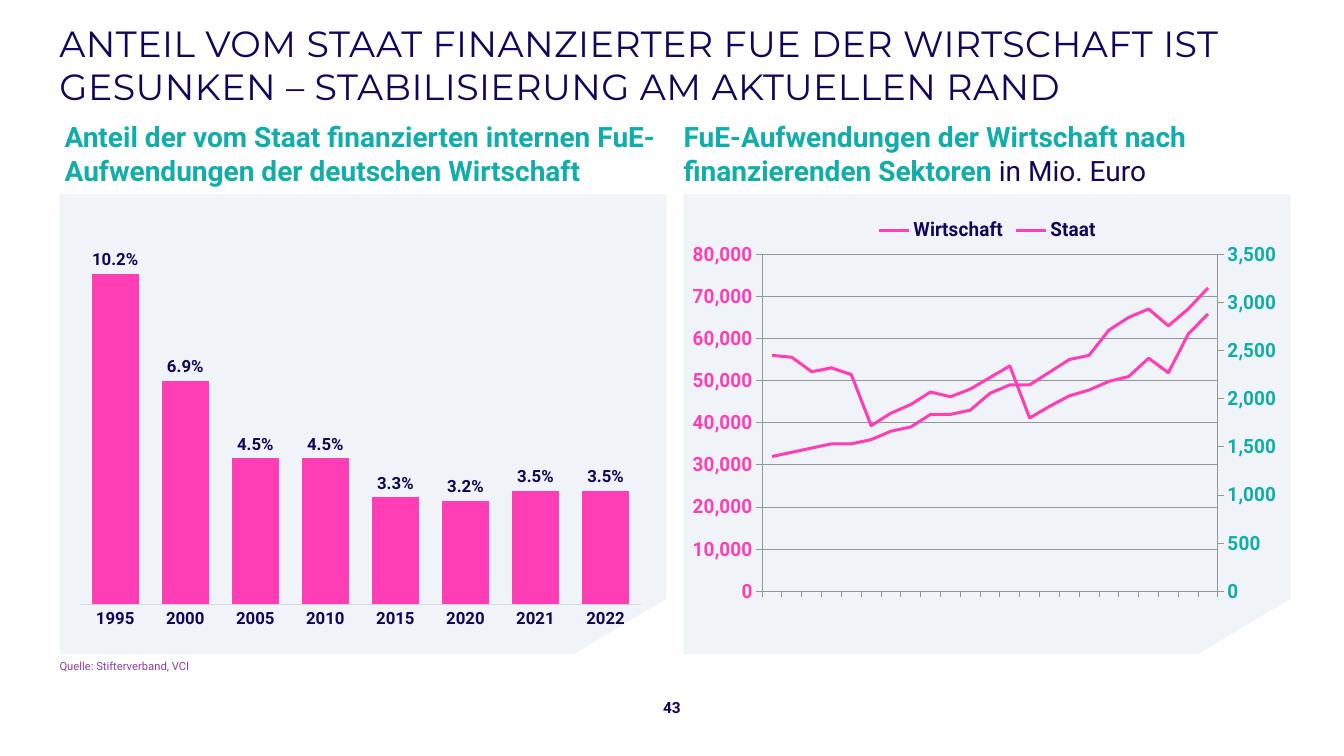
from copy import deepcopy
from dataclasses import dataclass

from pptx import Presentation
from pptx.chart.axis import CategoryAxis, ValueAxis
from pptx.chart.data import CategoryChartData
from pptx.dml.color import RGBColor
from pptx.enum.chart import (XL_CHART_TYPE, XL_LABEL_POSITION, XL_LEGEND_POSITION,
                             XL_TICK_LABEL_POSITION, XL_TICK_MARK)
from pptx.enum.text import MSO_ANCHOR, PP_ALIGN
from pptx.oxml import parse_xml
from pptx.oxml.ns import nsdecls, qn
from pptx.util import Inches, Pt


@dataclass(frozen=True)
class Theme:
    navy: str = "10065A"
    teal: str = "10ADAA"
    pink: str = "FF3EB5"
    purple: str = "8C3E9F"
    panel: str = "F0F3F7"
    grey: str = "969696"
    pale_grey: str = "D9D9D9"
    title_font: str = "Montserrat"
    body_font: str = "Roboto"
    title_size: int = 26
    heading_size: int = 20
    axis_size: int = 14
    bar_label_size: int = 12
    page_size: int = 11
    source_size: int = 8


THEME = Theme()
PANEL_WIDTH, PANEL_HEIGHT = 6.02, 4.56

SHARE_BY_YEAR = {"1995": 0.102, "2000": 0.069, "2005": 0.045, "2010": 0.045,
                 "2015": 0.033, "2020": 0.032, "2021": 0.035, "2022": 0.035}
SPENDING_YEARS = [str(year) for year in range(2000, 2023)]
BUSINESS_SPENDING = [32000, 33000, 34000, 35000, 35000, 36000, 38000, 39000, 42000, 42000,
                     43000, 47000, 49000, 49000, 52000, 55000, 56000, 62000, 65000, 67000,
                     63000, 67000, 72000]
STATE_SPENDING = [2450, 2430, 2280, 2320, 2250, 1720, 1850, 1940, 2070, 2020, 2100, 2220,
                  2340, 1800, 1920, 2030, 2090, 2180, 2230, 2420, 2270, 2670, 2880]


def color(value):
    return RGBColor.from_string(value)


def style_font(font, size, shade, bold=False, family=THEME.body_font):
    font.name, font.size, font.bold = family, Pt(size), bold
    font.color.rgb = color(shade)


def add_text(slide, box, text, size, shade, bold=False, family=THEME.body_font,
             anchor=MSO_ANCHOR.TOP, inset=0):
    frame = slide.shapes.add_textbox(*map(Inches, box)).text_frame
    frame.word_wrap = True
    frame.vertical_anchor = anchor
    frame.margin_left = frame.margin_right = 0
    frame.margin_top = frame.margin_bottom = Inches(inset)
    paragraph = frame.paragraphs[0]
    paragraph.text = text
    style_font(paragraph.runs[0].font, size, shade, bold, family)
    return paragraph


def add_panel(slide, left, top):
    """Pale panel with its lower right corner cut off."""
    right, bottom = left + PANEL_WIDTH, top + PANEL_HEIGHT
    outline = [(right, top), (right, top + 4.01), (right - 0.92, bottom), (left, bottom)]
    builder = slide.shapes.build_freeform(Inches(left), Inches(top))
    builder.add_line_segments([(Inches(x), Inches(y)) for x, y in outline], close=True)
    panel = builder.convert_to_shape()
    panel.shadow.inherit = False
    panel.fill.solid()
    panel.fill.fore_color.rgb = color(THEME.panel)
    panel.line.fill.background()


def add_chart(slide, box, kind, data, size, plot_box):
    """Chart with the common font and a fixed inner plot area."""
    chart = slide.shapes.add_chart(kind, *map(Inches, box), data).chart
    style_font(chart.font, size, THEME.navy, bold=True)
    chart.has_title = False
    plot_area = chart.plots[0]._element.getparent()
    for layout in plot_area.findall(qn("c:layout")):
        plot_area.remove(layout)
    sizes = "".join(f'<c:{tag} val="{value}"/>' for tag, value in zip("xywh", plot_box))
    plot_area.insert(0, parse_xml(
        f'<c:layout {nsdecls("c")}><c:manualLayout><c:layoutTarget val="inner"/>'
        f'<c:xMode val="edge"/><c:yMode val="edge"/>{sizes}</c:manualLayout></c:layout>'))
    return chart


def style_line(line, shade, width=0.75):
    line.color.rgb = color(shade)
    line.width = Pt(width)


def style_spending_axis(axis, shade, maximum, step):
    axis.minimum_scale, axis.maximum_scale, axis.major_unit = 0, maximum, step
    axis.major_tick_mark = XL_TICK_MARK.OUTSIDE
    axis.tick_labels.number_format = "#,##0"
    axis.tick_labels.number_format_is_linked = False
    style_font(axis.tick_labels.font, THEME.axis_size, shade, bold=True)
    style_line(axis.format.line, THEME.grey)


def move_last_series_to_right_axis(chart):
    """Give the last series its own line plot; return that plot's value axis."""
    left_plot = chart.plots[0]._element
    right_plot = deepcopy(left_plot)
    left_plot.remove(left_plot.findall(qn("c:ser"))[-1])
    for series in right_plot.findall(qn("c:ser"))[:-1]:
        right_plot.remove(series)
    left_plot.addnext(right_plot)

    category_axis = deepcopy(chart.category_axis._element)
    value_axis = deepcopy(chart.value_axis._element)
    chart.value_axis._element.addnext(value_axis)
    value_axis.addnext(category_axis)
    ids = ["50010", "50020"]
    for axis_id, value in zip(right_plot.findall(qn("c:axId")), ids):
        axis_id.set("val", value)
    for axis, (own, other) in ((category_axis, ids), (value_axis, ids[::-1])):
        axis.find(qn("c:axId")).set("val", own)
        axis.find(qn("c:crossAx")).set("val", other)
    value_axis.find(qn("c:crosses")).set("val", "max")
    value_axis.find(qn("c:axPos")).set("val", "r")
    CategoryAxis(category_axis).visible = False
    return ValueAxis(value_axis)


def add_share_chart(slide, box):
    data = CategoryChartData(number_format="0.0%")
    data.categories = list(SHARE_BY_YEAR)
    data.add_series("Series 1", list(SHARE_BY_YEAR.values()))
    chart = add_chart(slide, box, XL_CHART_TYPE.COLUMN_CLUSTERED, data,
                      THEME.bar_label_size, (0.02, 0.02, 0.96, 0.9))
    chart.has_legend = False
    bars = chart.plots[0]
    bars.gap_width, bars.overlap, bars.vary_by_categories = 50, -27, False
    bars.series[0].format.fill.solid()
    bars.series[0].format.fill.fore_color.rgb = color(THEME.pink)

    # Percentages above the bars
    bars.has_data_labels = True
    labels = bars.data_labels
    labels.show_value = True
    labels.position = XL_LABEL_POSITION.OUTSIDE_END
    labels.number_format, labels.number_format_is_linked = "0.0%", False
    style_font(labels.font, THEME.bar_label_size, THEME.navy, bold=True)

    # Axes
    chart.value_axis.minimum_scale, chart.value_axis.maximum_scale = 0, 0.12
    chart.value_axis.has_major_gridlines = False
    chart.value_axis.visible = False
    years = chart.category_axis
    years.major_tick_mark = XL_TICK_MARK.NONE
    style_font(years.tick_labels.font, THEME.bar_label_size, THEME.navy, bold=True)
    style_line(years.format.line, THEME.pale_grey)


def add_spending_chart(slide, box):
    data = CategoryChartData(number_format="#,##0")
    data.categories = SPENDING_YEARS
    data.add_series("Wirtschaft", BUSINESS_SPENDING)
    data.add_series("Staat", STATE_SPENDING)
    chart = add_chart(slide, box, XL_CHART_TYPE.LINE, data, THEME.axis_size,
                      (0.1, 0.11, 0.81, 0.78))
    chart.plots[0].vary_by_categories = False
    for series in chart.plots[0].series:
        series.smooth = False
        style_line(series.format.line, THEME.pink, 2.25)

    # Legend
    chart.has_legend = True
    chart.legend.position = XL_LEGEND_POSITION.TOP
    chart.legend.include_in_layout = False
    style_font(chart.legend.font, THEME.axis_size, THEME.navy, bold=True)

    # Axes: business on the left, state on the right
    years = chart.category_axis
    years.major_tick_mark = XL_TICK_MARK.OUTSIDE
    years.tick_label_position = XL_TICK_LABEL_POSITION.NONE
    style_line(years.format.line, THEME.grey)
    business_axis = chart.value_axis
    state_axis = move_last_series_to_right_axis(chart)
    style_spending_axis(business_axis, THEME.pink, 80000, 10000)
    style_spending_axis(state_axis, THEME.teal, 3500, 500)
    state_axis.has_major_gridlines = False
    business_axis.has_major_gridlines = True
    style_line(business_axis.major_gridlines.format.line, THEME.grey)


def add_chart_region(slide, left, top, heading, heading_indent, draw_chart, unit=""):
    """Heading, panel and chart of one half of the slide."""
    add_panel(slide, left, top + 0.74)
    paragraph = add_text(slide, (left + heading_indent, top, PANEL_WIDTH, 0.7), heading,
                         THEME.heading_size, THEME.teal, bold=True)
    if unit:
        run = paragraph.add_run()
        run.text = unit
        style_font(run.font, THEME.heading_size, THEME.navy)
    draw_chart(slide, (left + 0.09, top + 0.86, 5.79, 4.29))


def add_title(slide, box):
    title = add_text(
        slide, box,
        "ANTEIL VOM STAAT FINANZIERTER FUE DER WIRTSCHAFT IST GESUNKEN – "
        "STABILISIERUNG AM AKTUELLEN RAND",
        THEME.title_size, THEME.navy, family=THEME.title_font,
        anchor=MSO_ANCHOR.MIDDLE, inset=0.04)
    title.runs[0]._r.get_or_add_rPr().set("spc", "30")


def add_footer(slide, left, top):
    add_text(slide, (left, top, 5.08, 0.13), "Quelle: Stifterverband, VCI",
             THEME.source_size, THEME.purple)
    page = add_text(slide, (left + 5.78, top + 0.34, 0.59, 0.28), "43", THEME.page_size,
                    THEME.navy, bold=True, anchor=MSO_ANCHOR.MIDDLE)
    page.alignment = PP_ALIGN.CENTER


def main():
    deck = Presentation()
    deck.slide_width, deck.slide_height = Inches(13.33), Inches(7.5)
    slide = deck.slides.add_slide(deck.slide_layouts[6])
    add_title(slide, (0.59, 0.15, 12.2, 0.98))
    add_chart_region(slide, 0.59, 1.19, "Anteil der vom Staat finanzierten internen "
                     "FuE-Aufwendungen der deutschen Wirtschaft", 0.05, add_share_chart)
    add_chart_region(slide, 6.78, 1.19, "FuE-Aufwendungen der Wirtschaft nach "
                     "finanzierenden Sektoren", 0, add_spending_chart, " in Mio. Euro")
    add_footer(slide, 0.59, 6.54)
    deck.save("out.pptx")


if __name__ == "__main__":
    main()
